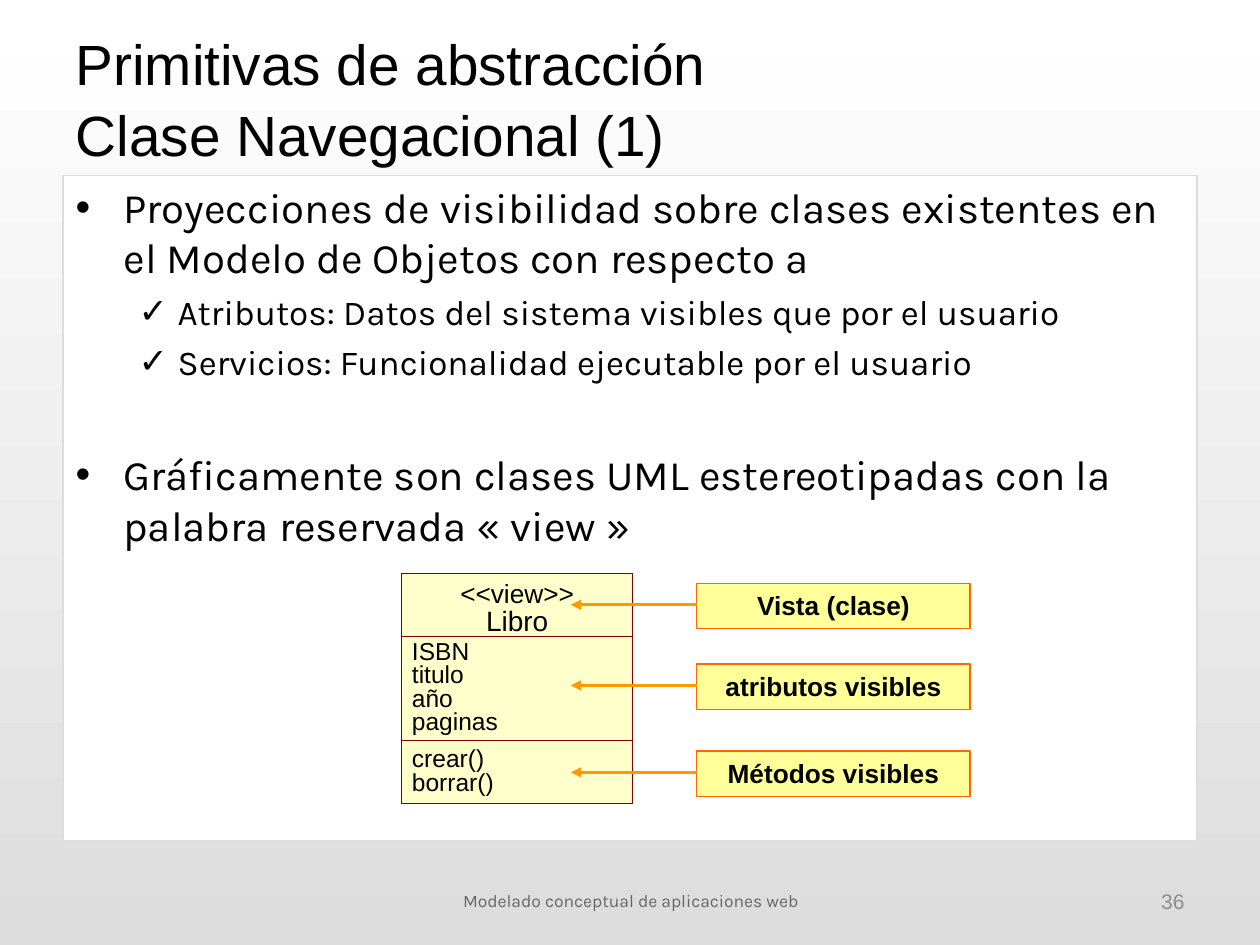
from lxml import etree
from pptx import Presentation
from pptx.dml.color import RGBColor
from pptx.enum.shapes import MSO_CONNECTOR, MSO_SHAPE
from pptx.enum.text import MSO_ANCHOR, MSO_AUTO_SIZE, PP_ALIGN
from pptx.oxml.ns import qn
from pptx.util import Inches, Pt

RECT, LINE = MSO_SHAPE.RECTANGLE, MSO_CONNECTOR.STRAIGHT
TOP, MIDDLE = MSO_ANCHOR.TOP, MSO_ANCHOR.MIDDLE
LEFT, CENTER, RIGHT = PP_ALIGN.LEFT, PP_ALIGN.CENTER, PP_ALIGN.RIGHT
FIXED = MSO_AUTO_SIZE.NONE

BLACK = RGBColor(0x00, 0x00, 0x00)
WHITE = RGBColor(0xFF, 0xFF, 0xFF)
SILVER = RGBColor(0xDD, 0xDD, 0xDD)
GRAY = RGBColor(0x8C, 0x8C, 0x8C)
DARK = RGBColor(0x66, 0x66, 0x66)
CREAM = RGBColor(0xFF, 0xFF, 0xCC)
MAROON = RGBColor(0x80, 0x00, 0x00)
YELLOW = RGBColor(0xFF, 0xFF, 0x99)
RUST = RGBColor(0xFF, 0x66, 0x00)
ORANGE = RGBColor(0xFF, 0x99, 0x00)

# Text, level, space before in points
BULLETS = [
    ("Proyecciones de visibilidad sobre clases existentes en "
     "el Modelo de Objetos con respecto a", 0, 0),
    ("Atributos: Datos del sistema visibles que por el usuario", 1, 4.6),
    ("Servicios: Funcionalidad ejecutable por el usuario", 1, 4.6),
    ("Gráficamente son clases UML estereotipadas con la "
     "palabra reservada « view »", 0, 38),
]
# Mark, text size, left margin, hanging indent
LEVELS = [("•", 24, 0.38, 0.38), ("✓", 20, 0.81, 0.31)]

CLASS_X, CLASS_W = 3.19, 1.83
LABEL_X, LABEL_W, LABEL_H = 5.53, 2.17, 0.36
LABELS = [("Vista (clase)", 4.63), ("atributos visibles", 5.27),
          ("Métodos visibles", 5.96)]


def place(shape, x, y, w, h):
    shape.left, shape.top = Inches(x), Inches(y)
    shape.width, shape.height = Inches(w), Inches(h)


def paint(shape, fill, line, width):
    shape.fill.solid()
    shape.fill.fore_color.rgb = fill
    shape.line.color.rgb = line
    shape.line.width = Pt(width)


def set_frame(frame, anchor, insets=(0.1, 0.05, 0.1, 0.05)):
    """Fix the frame's size; insets go left, top, right, bottom."""
    frame.word_wrap = True
    frame.auto_size = FIXED
    frame.vertical_anchor = anchor
    (frame.margin_left, frame.margin_top, frame.margin_right,
     frame.margin_bottom) = [Inches(n) for n in insets]


def add_run(para, text, size, font="Arial", color=BLACK, bold=False):
    run = para.add_run()
    run.text = text
    run.font.size = Pt(size)
    run.font.name = font
    run.font.color.rgb = color
    run.font.bold = bold


def add_back(slide):
    fill = slide.background.fill
    fill.gradient()
    fill.gradient_angle = 270
    for stop, color, pos in zip(fill.gradient_stops, (WHITE, SILVER), (0, 1)):
        stop.color.rgb = color
        stop.position = pos


def add_title(slide):
    title = slide.shapes.title
    place(title, 0.5, 0.14, 6.43, 1.25)
    set_frame(title.text_frame, MIDDLE)
    para = title.text_frame.paragraphs[0]
    para.alignment = LEFT
    para.line_spacing = 1.05
    add_run(para, "Primitivas de abstracción ", 32.4)
    para.add_line_break()
    add_run(para, "Clase Navegacional (1)", 32.4)


def set_bullet(para, mark, left, hang):
    props = para._p.get_or_add_pPr()
    props.set("marL", str(Inches(left)))
    props.set("indent", str(-Inches(hang)))
    etree.SubElement(props, qn("a:buFont"), typeface="Arial")
    etree.SubElement(props, qn("a:buChar"), char=mark)


def add_body(slide):
    body = slide.placeholders[1]
    place(body, 0.5, 1.39, 9, 5.28)
    paint(body, WHITE, SILVER, 0.75)
    frame = body.text_frame
    set_frame(frame, TOP)
    for i, (text, level, gap) in enumerate(BULLETS):
        para = frame.add_paragraph() if i else frame.paragraphs[0]
        mark, size, left, hang = LEVELS[level]
        para.level = level
        set_bullet(para, mark, left, hang)
        para.space_before = Pt(gap)
        add_run(para, text, size, "Karla")


def add_note(slide, text, x, w, align, size, font, color):
    box = slide.shapes.add_textbox(Inches(x), Inches(6.95), Inches(w), Inches(0.4))
    set_frame(box.text_frame, MIDDLE)
    para = box.text_frame.paragraphs[0]
    para.alignment = align
    add_run(para, text, size, font, color)


def add_box(shapes, x, y, w, h, fill, line, width):
    box = shapes.add_shape(RECT, Inches(x), Inches(y), Inches(w), Inches(h))
    box.shadow.inherit = False
    paint(box, fill, line, width)
    return box


def add_part(slide, y, h, rows, align, spacing, insets):
    """Add one compartment of the class; rows are (text, size)."""
    box = add_box(slide.shapes, CLASS_X, y, CLASS_W, h, CREAM, MAROON, 0.5)
    frame = box.text_frame
    set_frame(frame, MIDDLE, insets)
    for i, (text, size) in enumerate(rows):
        para = frame.add_paragraph() if i else frame.paragraphs[0]
        para.alignment = align
        para.line_spacing = spacing
        add_run(para, text, size)


def add_class(slide):
    add_part(slide, 4.55, 0.5, [("<<view>>", 15), ("Libro", 16)],
             CENTER, 0.85, (0.1, 0.13, 0.1, 0.05))
    parts = [(5.05, 0.83, ("ISBN", "titulo", "año", "paginas")),
             (5.88, 0.5, ("crear()", "borrar()"))]
    for y, h, names in parts:
        add_part(slide, y, h, [(name, 14) for name in names],
                 LEFT, 0.8, (0.08,) * 4)


def add_arrow(shapes, x, y, end):
    arrow = shapes.add_connector(LINE, Inches(x), Inches(y), Inches(end), Inches(y))
    arrow.line.color.rgb = ORANGE
    arrow.line.width = Pt(1.75)
    etree.SubElement(arrow.line._get_or_add_ln(), qn("a:tailEnd"), type="triangle")
    etree.SubElement(arrow._element.spPr, qn("a:effectLst"))


def add_label(slide, text, y):
    """Add a label box with its arrow to the class, as one group."""
    shapes = slide.shapes.add_group_shape().shapes
    box = add_box(shapes, LABEL_X, y, LABEL_W, LABEL_H, YELLOW, RUST, 0.75)
    set_frame(box.text_frame, TOP, (0.06, 0.05, 0.06, 0.05))
    para = box.text_frame.paragraphs[0]
    para.alignment = CENTER
    add_run(para, text, 15, bold=True)
    add_arrow(shapes, LABEL_X, y + 0.17, LABEL_X - 1)


def main():
    deck = Presentation()
    deck.slide_width, deck.slide_height = Inches(10), Inches(7.5)
    slide = deck.slides.add_slide(deck.slide_layouts[1])
    add_back(slide)
    add_title(slide)
    add_body(slide)
    add_note(slide, "36", 7.17, 2.33, RIGHT, 12, "Arial", GRAY)
    add_note(slide, "Modelado conceptual de aplicaciones web",
             3.42, 3.17, CENTER, 10, "Karla", DARK)
    add_class(slide)
    for text, y in LABELS:
        add_label(slide, text, y)
    deck.save("out.pptx")


if __name__ == "__main__":
    main()
